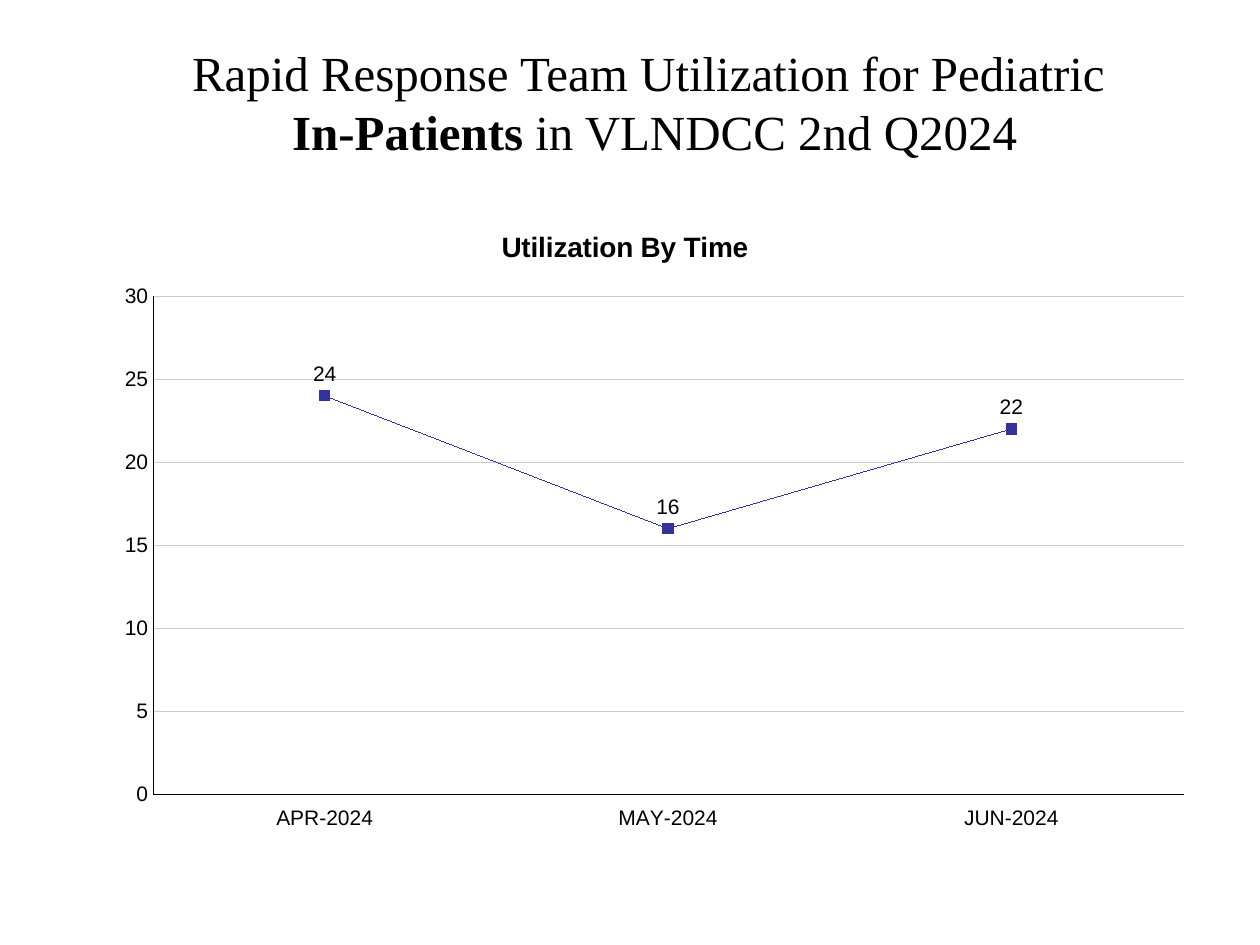
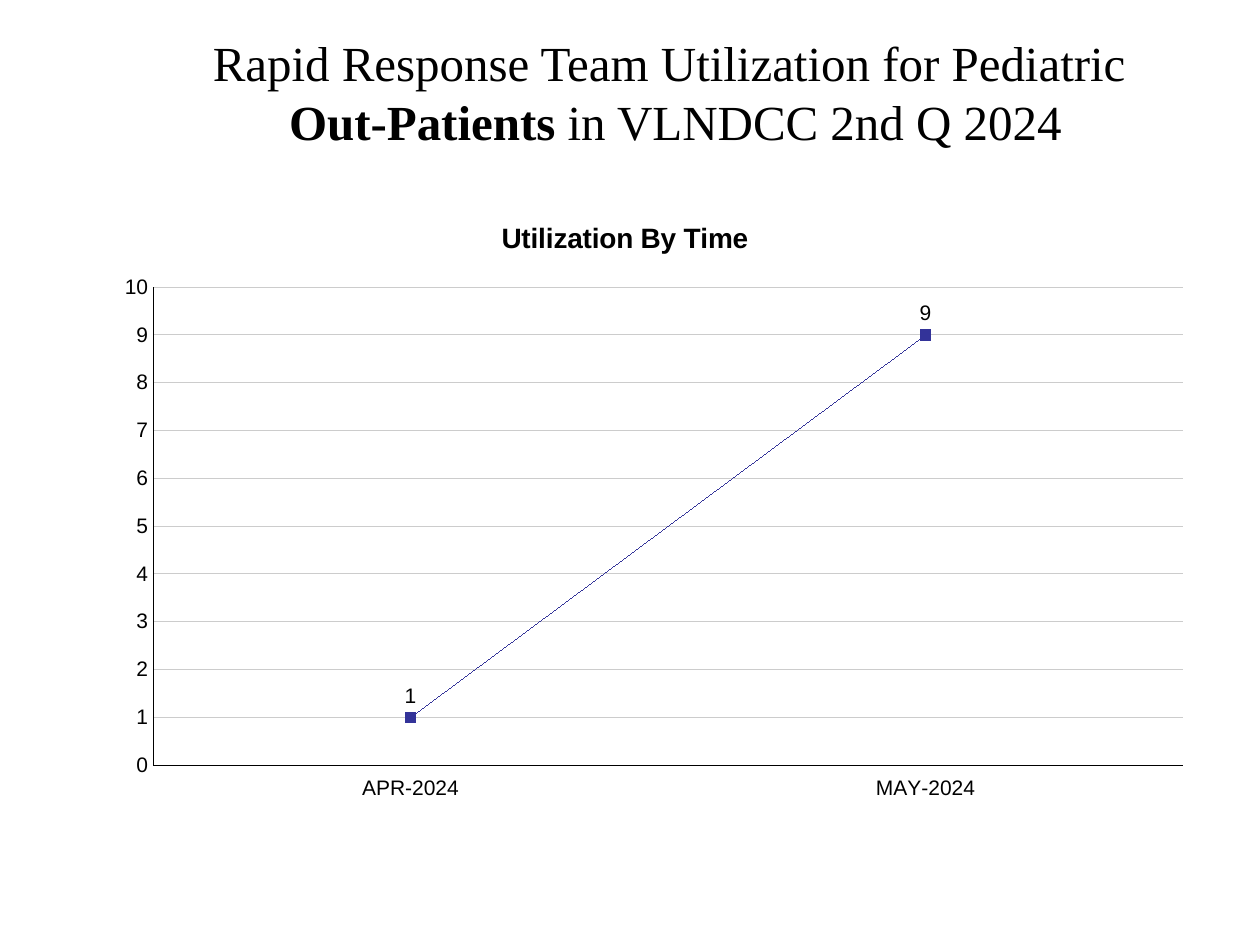
from lxml.etree import SubElement
from pptx import Presentation
from pptx.chart.data import CategoryChartData
from pptx.dml.color import RGBColor
from pptx.enum.chart import XL_CHART_TYPE as ChartType
from pptx.enum.chart import XL_LABEL_POSITION as LabelPosition
from pptx.enum.chart import XL_MARKER_STYLE as MarkerStyle
from pptx.enum.chart import XL_TICK_LABEL_POSITION as TickLabels
from pptx.enum.chart import XL_TICK_MARK as TickMark
from pptx.enum.text import PP_ALIGN as Align
from pptx.oxml.ns import qn
from pptx.util import Inches, Pt

BLACK = RGBColor(0x00, 0x00, 0x00)
WHITE = RGBColor(0xFF, 0xFF, 0xFF)
INDIGO = RGBColor(0x33, 0x33, 0x99)
GRID_GRAY = RGBColor(0xCC, 0xCC, 0xCC)
TITLE_FONT = "Times New Roman"
CHART_FONT = "Arial"
HAIRLINE = Pt(0.01)
COLUMNS, ROWS = 100, 75
CHART_LEFT, CHART_WIDTH = 3.5, 92.1
PLOT_LEFT, PLOT_TOP, PLOT_RIGHT, PLOT_BOTTOM = 8.65, 7.3, 1.7, 8.25
CHART_TITLE_LEFT, CHART_TITLE_TOP = 35.9, 1.6


class Deck:
    def __init__(self):
        self.presentation = Presentation()
        self.presentation.slide_width = Inches(10)
        self.presentation.slide_height = Inches(7.5)
        self.slide = None

    def grid(self, left, top, width, height):
        column = self.presentation.slide_width / COLUMNS
        row = self.presentation.slide_height / ROWS
        return (round(left * column), round(top * row),
                round(width * column), round(height * row))

    def style(self, font, size, name=CHART_FONT, bold=False):
        font.name, font.size, font.bold = name, Pt(size), bold
        font.color.rgb = BLACK

    def hairline(self, line, color):
        line.color.rgb = color
        line.width = HAIRLINE

    def place(self, element, after, **shares):
        for old in element.findall(qn("c:layout")):
            element.remove(old)
        layout = SubElement(element, qn("c:layout"))
        manual = SubElement(layout, qn("c:manualLayout"))
        if "w" in shares:
            SubElement(manual, qn("c:layoutTarget"), val="inner")
        for mode in ("xMode", "yMode"):
            SubElement(manual, qn(f"c:{mode}"), val="edge")
        for name, share in shares.items():
            SubElement(manual, qn(f"c:{name}"), val=f"{share:.4f}")
        element.insert(after, layout)

    def add_slide(self):
        self.slide = self.presentation.slides.add_slide(
            self.presentation.slide_layouts[6])
        self.slide.background.fill.solid()
        self.slide.background.fill.fore_color.rgb = WHITE

    def add_title(self, box, lines):
        text_frame = self.slide.shapes.add_textbox(*self.grid(*box)).text_frame
        text_frame.word_wrap = True
        for index, parts in enumerate(lines):
            paragraph = (text_frame.add_paragraph() if index
                         else text_frame.paragraphs[0])
            paragraph.alignment = Align.CENTER
            for text, bold in parts:
                run = paragraph.add_run()
                run.text = text
                self.style(run.font, 28, TITLE_FONT, bold)

    def add_line_chart(self, top, height, months, calls, maximum, step):
        data = CategoryChartData(number_format="#0")
        data.categories = months
        data.add_series("Series 1", calls)
        box = self.grid(CHART_LEFT, top, CHART_WIDTH, height)
        chart = self.slide.shapes.add_chart(
            ChartType.LINE_MARKERS, *box, data).chart
        chart.has_legend = False
        self.style(chart.font, 12)
        self.add_chart_title(chart, height)
        self.place(chart.element.find(".//" + qn("c:plotArea")), 0,
                   x=PLOT_LEFT / CHART_WIDTH, y=PLOT_TOP / height,
                   w=1 - (PLOT_LEFT + PLOT_RIGHT) / CHART_WIDTH,
                   h=1 - (PLOT_TOP + PLOT_BOTTOM) / height)
        self.style_axes(chart, maximum, step)
        self.style_series(chart.plots[0])

    def add_chart_title(self, chart, height):
        chart.has_title = True
        text_frame = chart.chart_title.text_frame
        text_frame.text = "Utilization By Time"
        self.style(text_frame.paragraphs[0].runs[0].font, 16, bold=True)
        chart.chart_title.include_in_layout = False
        self.place(chart.element.find(".//" + qn("c:title")), 1,
                   x=CHART_TITLE_LEFT / CHART_WIDTH,
                   y=CHART_TITLE_TOP / height)

    def style_axes(self, chart, maximum, step):
        for axis in (chart.category_axis, chart.value_axis):
            axis.major_tick_mark = axis.minor_tick_mark = TickMark.NONE
            self.style(axis.tick_labels.font, 12)
            self.hairline(axis.format.line, BLACK)
        chart.category_axis.tick_label_position = TickLabels.LOW
        values = chart.value_axis
        values.minimum_scale, values.maximum_scale = 0, maximum
        values.major_unit = step
        values.tick_labels.number_format = "#0"
        values.tick_labels.number_format_is_linked = False
        self.hairline(values.major_gridlines.format.line, GRID_GRAY)

    def style_series(self, plot):
        plot.vary_by_categories = False
        series = plot.series[0]
        series.smooth = False
        self.hairline(series.format.line, INDIGO)
        series.marker.style, series.marker.size = MarkerStyle.SQUARE, 6
        series.marker.format.fill.solid()
        series.marker.format.fill.fore_color.rgb = INDIGO
        self.hairline(series.marker.format.line, INDIGO)
        labels = series.data_labels
        labels.show_value = True
        labels.position = LabelPosition.ABOVE
        labels.number_format, labels.number_format_is_linked = "#0", False
        self.style(labels.font, 12)


def main():
    deck = Deck()
    opening = [("Rapid Response Team Utilization for Pediatric ", False)]

    deck.add_slide()
    deck.add_title((11.4, 2.9, 81.1, 10.4), [
        opening, [("In-Patients ", True), ("in VLNDCC 2nd Q2024", False)]])
    deck.add_line_chart(16.2, 55.1, ["APR-2024", "MAY-2024", "JUN-2024"],
                        [24, 16, 22], maximum=30, step=5)

    deck.add_slide()
    deck.add_title((14.6, 2.1, 78, 10.4), [
        opening, [("Out-Patients", True), (" in VLNDCC 2nd Q 2024", False)]])
    deck.add_line_chart(15.5, 53.5, ["APR-2024", "MAY-2024"],
                        [1, 9], maximum=10, step=1)

    deck.presentation.save("out.pptx")


if __name__ == "__main__":
    main()
